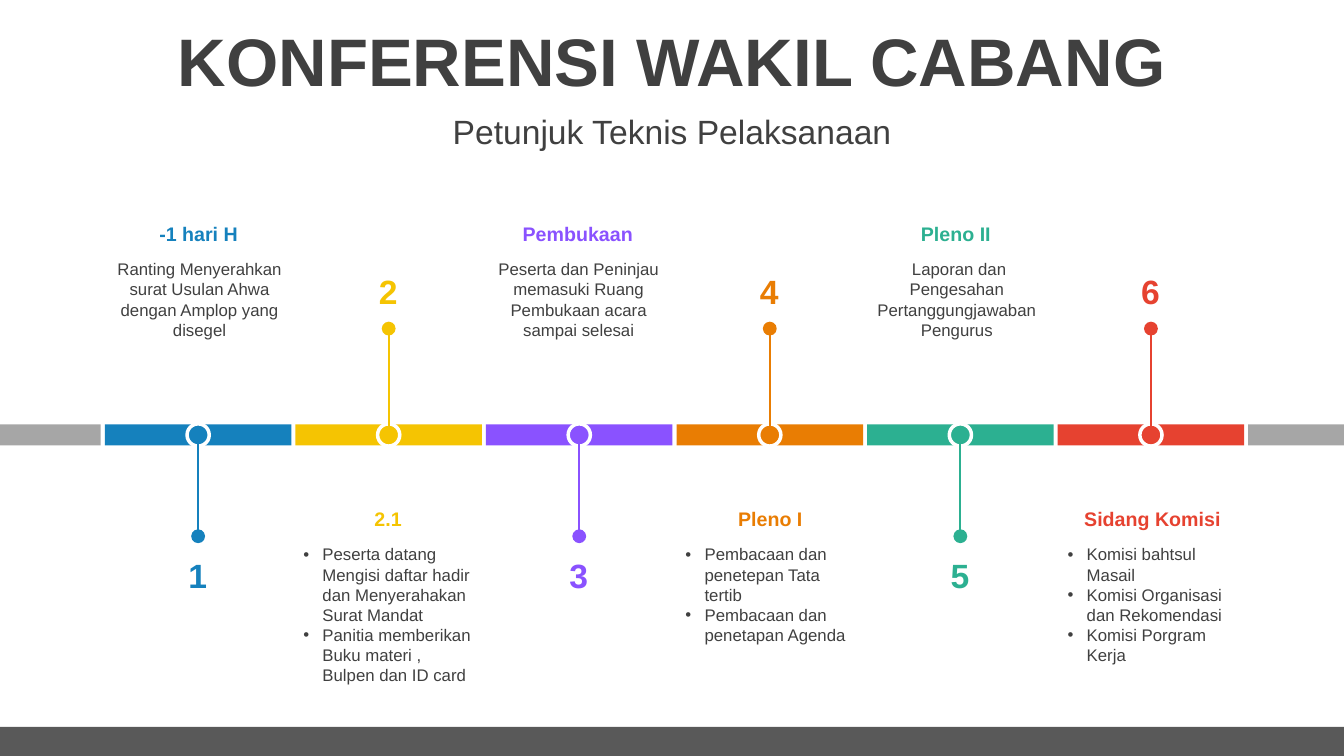
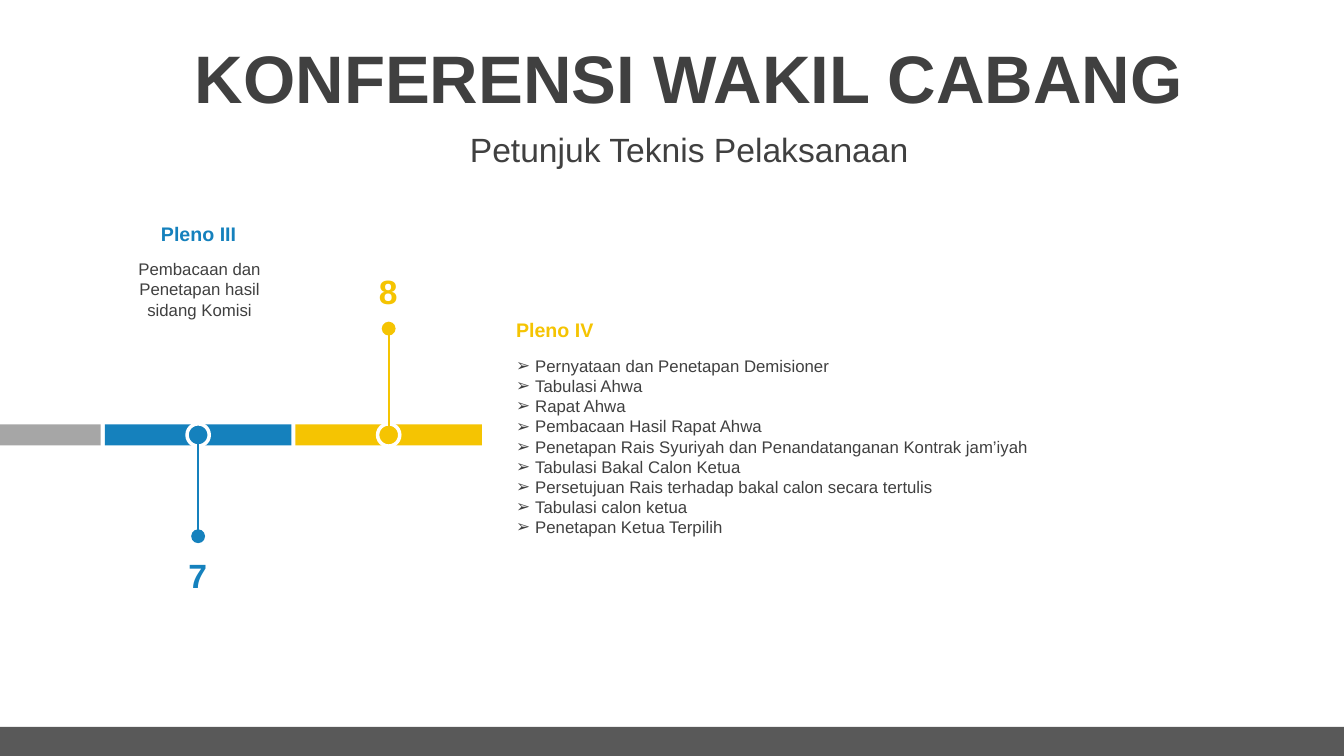
from collections import namedtuple

from lxml import etree
from pptx import Presentation
from pptx.dml.color import RGBColor
from pptx.enum.shapes import MSO_CONNECTOR, MSO_SHAPE
from pptx.enum.text import MSO_ANCHOR, MSO_AUTO_SIZE, PP_ALIGN
from pptx.oxml.ns import qn
from pptx.util import Inches, Pt

RECTANGLE, OVAL = MSO_SHAPE.RECTANGLE, MSO_SHAPE.OVAL
STRAIGHT = MSO_CONNECTOR.STRAIGHT
LEFT, CENTER = PP_ALIGN.LEFT, PP_ALIGN.CENTER
TOP, MIDDLE = MSO_ANCHOR.TOP, MSO_ANCHOR.MIDDLE
FIT_SHAPE, NO_FIT = MSO_AUTO_SIZE.SHAPE_TO_FIT_TEXT, MSO_AUTO_SIZE.NONE

WHITE = RGBColor(0xFF, 0xFF, 0xFF)
INK = RGBColor(0x40, 0x40, 0x40)
BAND = RGBColor(0x59, 0x59, 0x59)
GRAY = RGBColor(0xA6, 0xA6, 0xA6)
BLUE = RGBColor(0x15, 0x81, 0xBD)
YELLOW = RGBColor(0xF5, 0xC4, 0x02)
PURPLE = RGBColor(0x8A, 0x52, 0xFF)
ORANGE = RGBColor(0xE9, 0x7D, 0x03)
GREEN = RGBColor(0x2C, 0xB0, 0x91)
RED = RGBColor(0xE6, 0x42, 0x30)
STEP_COLORS = [BLUE, YELLOW, PURPLE, ORANGE, GREEN, RED]

FONT = "Arial"
SLIDE_W, SLIDE_H = 13.33, 7.5
BAND_H = 0.29
AXIS_TOP, BAR_H = 4.21, 0.21
FIRST_LEFT, PITCH, GAP = 1.04, 1.89, 0.04
LINE_H = 0.2

Box = namedtuple("Box", "left top width height")
Caption = namedtuple("Caption", "heading lines rows bullet shift")

OPENING_CAPTIONS = [
    Caption("-1 hari H",
            ["Ranting Menyerahkan surat Usulan Ahwa dengan Amplop yang disegel"],
            4, None, -0.01),
    Caption("2.1",
            ["Peserta datang Mengisi daftar hadir dan Menyerahakan Surat Mandat",
             "Panitia memberikan Buku materi , Bulpen dan ID card"],
            7, "•", -0.02),
    Caption("Pembukaan",
            ["Peserta dan Peninjau memasuki Ruang Pembukaan acara sampai selesai"],
            4, None, -0.03),
    Caption("Pleno I",
            ["Pembacaan dan penetepan Tata tertib",
             "Pembacaan dan penetapan Agenda"],
            5, "•", -0.01),
    Caption("Pleno II",
            [" Laporan dan Pengesahan Pertanggungjawaban Pengurus"],
            4, None, -0.06),
    Caption("Sidang Komisi",
            ["Komisi bahtsul Masail", "Komisi Organisasi dan Rekomendasi",
             "Komisi Porgram Kerja"],
            6, "•", 0),
]
CLOSING_CAPTIONS = [
    Caption("Pleno III", ["Pembacaan dan Penetapan hasil sidang Komisi"],
            3, None, -0.01),
    None,
]
FINAL_CAPTION = Caption(
    "Pleno IV",
    ["Pernyataan dan Penetapan Demisioner",
     "Tabulasi Ahwa",
     "Rapat Ahwa",
     "Pembacaan Hasil Rapat Ahwa",
     "Penetapan Rais Syuriyah dan Penandatanganan Kontrak jam’iyah",
     "Tabulasi Bakal Calon Ketua",
     "Persetujuan Rais terhadap bakal calon secara tertulis",
     "Tabulasi calon ketua",
     "Penetapan Ketua Terpilih"],
    9, "➢", 0)


def inches(box):
    return [Inches(length) for length in box]


def add_solid(slide, kind, box, color, outline=None):
    solid = slide.shapes.add_shape(kind, *inches(box))
    solid.shadow.inherit = False
    solid.fill.solid()
    solid.fill.fore_color.rgb = color
    if outline is None:
        solid.line.fill.background()
    else:
        solid.line.color.rgb = outline
        solid.line.width = Pt(2.5)


def set_bullet(paragraph, bullet):
    properties = paragraph._p.get_or_add_pPr()
    properties.set("marL", str(Inches(0.19)))
    properties.set("indent", str(-Inches(0.19)))
    etree.SubElement(properties, qn("a:buFont")).set("typeface", FONT)
    etree.SubElement(properties, qn("a:buChar")).set("char", bullet)


def write(frame, lines, size, color, bold=False, align=CENTER, anchor=TOP,
          fit=FIT_SHAPE, bullet=None):
    frame.word_wrap = True
    frame.auto_size = fit
    frame.vertical_anchor = anchor
    frame.text = "\n".join(lines)
    for paragraph in frame.paragraphs:
        paragraph.alignment = align
        if bullet:
            set_bullet(paragraph, bullet)
        for run in paragraph.runs:
            run.font.name = FONT
            run.font.size = Pt(size)
            run.font.bold = bold
            run.font.color.rgb = color


def add_text(slide, box, lines, size, color, **style):
    frame = slide.shapes.add_textbox(*inches(box)).text_frame
    write(frame, lines, size, color, **style)
    return frame


def add_header(slide, box):
    title = slide.shapes.title
    title.left, title.top, title.width, title.height = inches(
        box._replace(height=0.85))
    write(title.text_frame, ["KONFERENSI WAKIL CABANG"], 48, INK, bold=True,
          anchor=MIDDLE, fit=NO_FIT)
    title.text_frame.paragraphs[0].line_spacing = 0.9
    subtitle = add_text(slide, box._replace(top=box.top + 0.88, height=0.46),
                        ["Petunjuk Teknis Pelaksanaan"], 24, INK,
                        anchor=MIDDLE, fit=NO_FIT)
    subtitle.paragraphs[0].line_spacing = 0.9
    subtitle.paragraphs[0].space_before = Pt(10)


def add_caption(slide, box, caption, color, heading_align=CENTER):
    add_text(slide, Box(box.left, box.top, box.width - 0.02, 0.34),
             [caption.heading], 14, color, bold=True, align=heading_align)
    body_height = 0.1 + LINE_H * caption.rows
    add_text(slide, Box(box.left, box.top + 0.37, box.width, body_height),
             caption.lines, 12, INK, bullet=caption.bullet,
             align=LEFT if caption.bullet else CENTER)


def add_pin(slide, x, start, end, color):
    pin = slide.shapes.add_connector(
        STRAIGHT, *inches((x, start, x, end)))
    pin.line.color.rgb = color
    pin.line.width = Pt(1.5)
    etree.SubElement(pin.line._get_or_add_ln(), qn("a:tailEnd"),
                     type="oval", w="lg", len="lg")
    etree.SubElement(pin._element.spPr, qn("a:effectLst"))


def add_step(slide, bar, number, caption, color, pin_down):
    center_x = bar.left + bar.width / 2
    center_y = bar.top + bar.height / 2
    add_solid(slide, RECTANGLE, bar, color)
    add_solid(slide, OVAL, Box(center_x - 0.11, center_y - 0.11, 0.22, 0.22),
              color, WHITE)
    if pin_down:
        pin_end, number_top, caption_top = 1.11, 1.25, -2.06
    else:
        pin_end, number_top, caption_top = -0.95, -1.57, 0.77
    add_pin(slide, center_x, center_y, bar.top + pin_end, color)
    add_text(slide, Box(center_x - 0.69, bar.top + number_top, 1.37, 0.5),
             [str(number)], 24, color, bold=True)
    if caption:
        add_caption(slide, Box(bar.left + caption.shift, bar.top + caption_top,
                               1.9, 1.5), caption, color)


def add_timeline(slide, box, first_number, captions):
    add_solid(slide, RECTANGLE,
              Box(0, box.top, box.left - GAP, box.height), GRAY)
    for column, (caption, color) in enumerate(zip(captions, STEP_COLORS)):
        bar = Box(box.left + column * PITCH, box.top, PITCH - GAP, box.height)
        add_step(slide, bar, first_number + column, caption, color,
                 column % 2 == 0)


def add_base_slide(deck, header_box):
    slide = deck.slides.add_slide(deck.slide_layouts[5])
    add_solid(slide, RECTANGLE,
              Box(0, SLIDE_H - BAND_H, SLIDE_W, BAND_H), BAND)
    add_header(slide, header_box)
    return slide


def build_opening(deck):
    slide = add_base_slide(deck, Box(0, 0.22, SLIDE_W, 1.34))
    axis = Box(FIRST_LEFT, AXIS_TOP, 6 * PITCH, BAR_H)
    add_timeline(slide, axis, 1, OPENING_CAPTIONS)
    tail_left = axis.left + axis.width
    add_solid(slide, RECTANGLE,
              Box(tail_left, axis.top, SLIDE_W - tail_left, axis.height), GRAY)


def build_closing(deck):
    slide = add_base_slide(deck, Box(0.17, 0.39, SLIDE_W, 1.34))
    add_timeline(slide, Box(FIRST_LEFT, AXIS_TOP, 2 * PITCH, BAR_H), 7,
                 CLOSING_CAPTIONS)
    add_caption(slide, Box(5.02, 3.11, 5.86, 2.29), FINAL_CAPTION, YELLOW, LEFT)


def main():
    deck = Presentation()
    deck.slide_width, deck.slide_height = Inches(SLIDE_W), Inches(SLIDE_H)
    build_opening(deck)
    build_closing(deck)
    deck.save("out.pptx")


if __name__ == "__main__":
    main()
